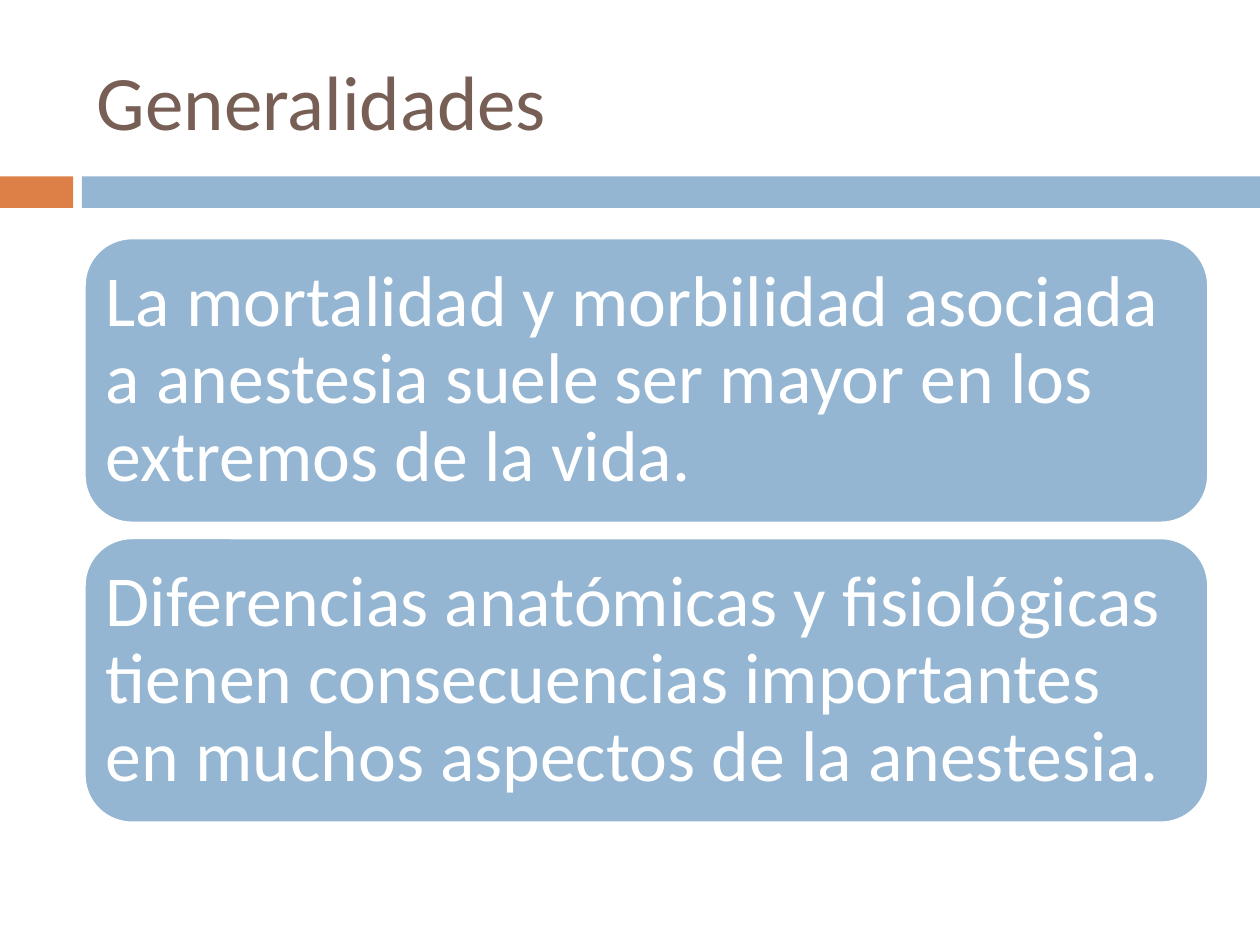
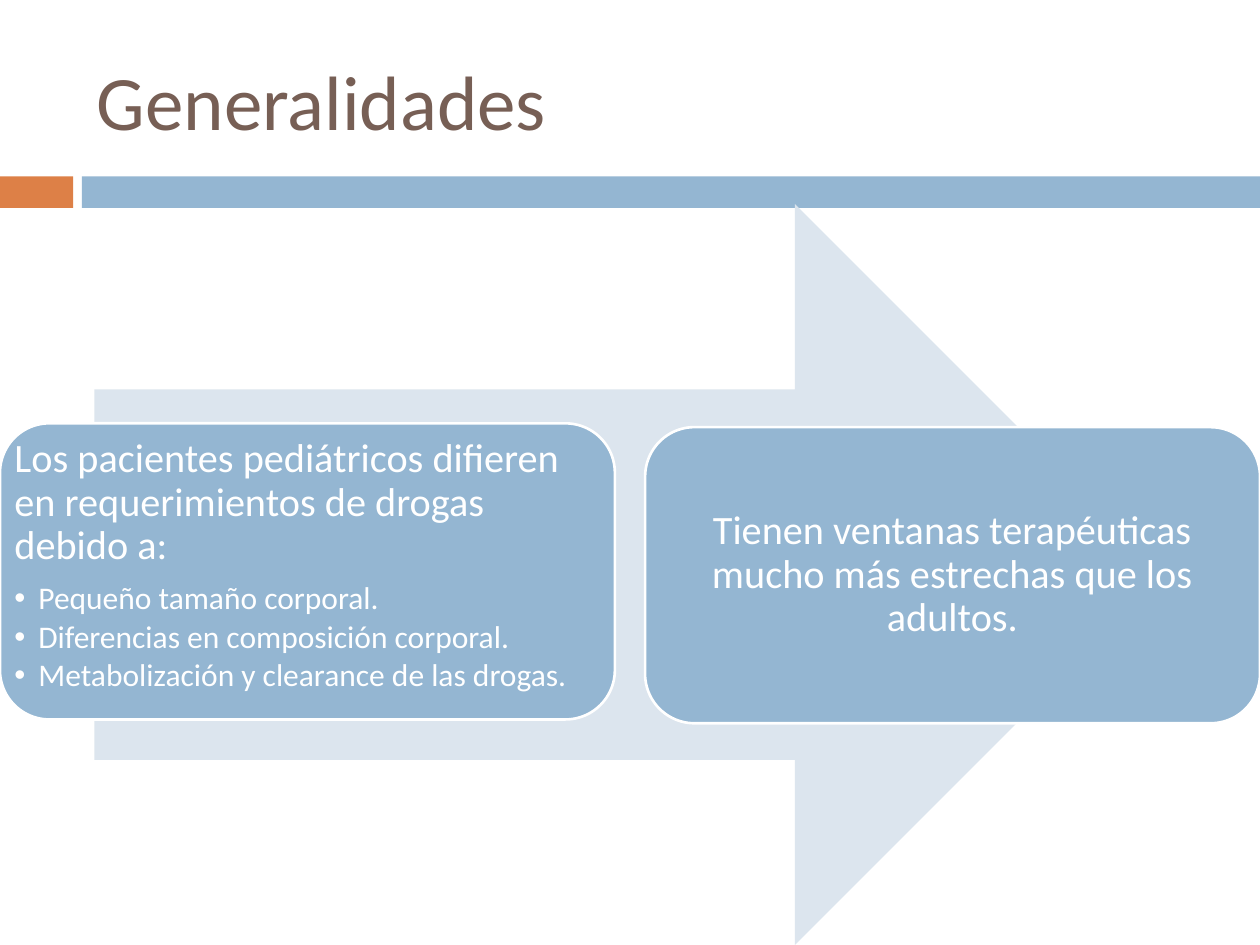
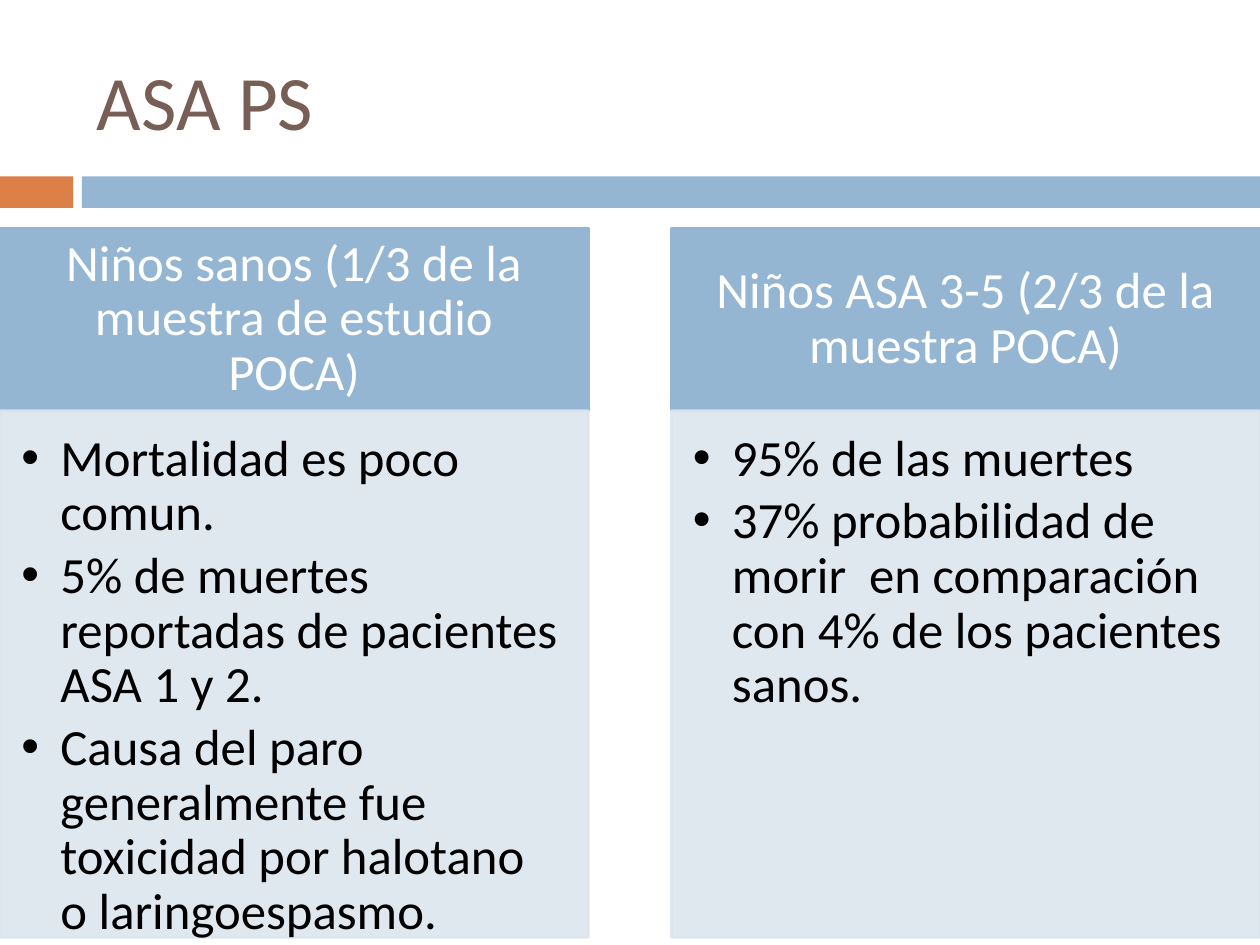
from lxml.etree import SubElement as Sub
from pptx import Presentation
from pptx.dml.color import RGBColor
from pptx.enum.shapes import MSO_SHAPE as Shape
from pptx.enum.text import MSO_ANCHOR as Anchor, PP_ALIGN as Align
from pptx.oxml.ns import qn
from pptx.util import Inches, Pt

COLORS = {"title": "775F55", "accent": "DD8047", "blue": "94B6D2",
          "pale": "DCE5EE", "white": "FFFFFF", "black": "000000"}
FONT = "Calibri"
WIDE = 10


def tint(name):
    return RGBColor.from_string(COLORS[name])


def fade(fill, share):
    """Set the opacity, in percent, of a solid fill element."""
    Sub(fill[0], qn("a:alpha")).set("val", str(share * 1000))


def bullet(para, indent):
    props = para._p.get_or_add_pPr()
    props.set("marL", str(Inches(indent)))
    props.set("indent", str(-Inches(indent)))
    Sub(props, qn("a:buFont")).set("typeface", "Arial")
    Sub(props, qn("a:buChar")).set("char", "•")


class Deck:
    def __init__(self):
        self.prs = Presentation()
        self.prs.slide_width, self.prs.slide_height = Inches(WIDE), Inches(7.5)
        self.slide = None

    def page(self, title):
        """Start a slide with its two-part band and its title."""
        self.slide = self.prs.slides.add_slide(self.prs.slide_layouts[6])
        self.block((0, 1.4, 0.58, 0.25), "accent")
        self.block((0.65, 1.4, 9.35, 0.25), "blue")
        box = self.slide.shapes.add_textbox(*map(Inches, (0.67, 0.25, 8.92, 1.08)))
        self.frame(box, Anchor.MIDDLE, (0.1, 0.05, 0.1, 0.05))
        self.line(box, title, 44, "title", lead=1, after=0)

    def block(self, area, fill, line=None, kind=Shape.RECTANGLE, alpha=None):
        shape = self.slide.shapes.add_shape(kind, *map(Inches, area))
        shape.shadow.inherit = False
        shape.fill.solid()
        shape.fill.fore_color.rgb = tint(fill)
        if line:
            shape.line.color.rgb = tint(line)
            shape.line.width = Pt(1.5)
        else:
            shape.line.fill.background()
        if alpha:
            for solid in list(shape._element.spPr.iter(qn("a:solidFill"))):
                fade(solid, alpha)
        return shape

    def card(self, area, anchor=Anchor.MIDDLE, pad=0.0):
        shape = self.block(area, "blue", "white", Shape.ROUNDED_RECTANGLE)
        self.frame(shape, anchor, (pad,) * 4)
        return shape

    def frame(self, shape, anchor, pads):
        """Set anchor and left, top, right and bottom insets."""
        text = shape.text_frame
        text.word_wrap = True
        text.vertical_anchor = anchor
        (text.margin_left, text.margin_top,
         text.margin_right, text.margin_bottom) = map(Inches, pads)

    def line(self, shape, text, size, color="white", align=Align.LEFT,
             lead=0.9, after=0.35, indent=None):
        """Add a paragraph; after is a share of the text size."""
        frame = shape.text_frame
        para = frame.paragraphs[0] if not frame.text else frame.add_paragraph()
        para.text = text
        para.alignment = align
        para.line_spacing = lead
        para.space_after = Pt(size * after)
        para.font.size, para.font.name = Pt(size), FONT
        para.font.color.rgb = tint(color)
        if indent:
            bullet(para, indent)

    def items(self, shape, texts, size, color, indent):
        for text in texts:
            self.line(shape, text, size, color, after=0.15, indent=indent)


def risks(deck):
    deck.page("Generalidades")
    facts = (
        "La mortalidad y morbilidad asociada a anestesia suele ser mayor en los "
        "extremos de la vida.",
        "Diferencias anatómicas y fisiológicas tienen consecuencias importantes "
        "en muchos aspectos de la anestesia.",
    )
    for row, fact in enumerate(facts):
        card = deck.card((0.67, 1.89 + row * 2.38, 8.92, 2.26), pad=0.06)
        deck.line(card, fact, 41)


def drugs(deck):
    deck.page("Generalidades")
    deck.block((0.75, 1.62, 8.5, 5.88), "pale", kind=Shape.RIGHT_ARROW)
    width, high = 4.88, 2.35
    needs = deck.card((0, 3.36, width, high), Anchor.TOP)
    deck.line(needs, "Los pacientes pediátricos difieren en requerimientos de "
              "drogas debido a:", 23)
    deck.items(needs, ("Pequeño tamaño corporal.",
                       "Diferencias en composición corporal.",
                       "Metabolización y clearance de las drogas."),
               18, "white", 0.19)
    window = deck.card((WIDE - width, 3.39, width, high))
    deck.line(window, "Tienen ventanas terapéuticas mucho más estrechas que los "
              "adultos.", 23, align=Align.CENTER)


def groups(deck):
    deck.page("ASA PS")
    width, top, head = 4.67, 1.81, 1.45
    columns = (
        ("Niños sanos (1/3 de la muestra de estudio POCA)",
         ("Mortalidad es poco comun.",
          "5% de muertes reportadas de pacientes ASA 1 y 2.",
          "Causa del paro generalmente fue toxicidad por halotano o "
          "laringoespasmo.")),
        ("Niños ASA 3-5 (2/3 de la muestra POCA)",
         ("95% de las muertes",
          "37% probabilidad de morir  en comparación con 4% de los pacientes "
          "sanos.")),
    )
    for col, (name, facts) in enumerate(columns):
        left = col * (WIDE - width)
        label = deck.block((left, top, width, head), "blue", "blue")
        deck.frame(label, Anchor.MIDDLE, (0.23, 0.13, 0.23, 0.13))
        deck.line(label, name, 29, align=Align.CENTER)
        body = deck.block((left, top + head, width, 4.18), "pale", "pale", alpha=90)
        deck.frame(body, Anchor.TOP, (0.17, 0.17, 0.23, 0.25))
        deck.items(body, facts, 29, "black", 0.31)


def main():
    deck = Deck()
    for build in (risks, drugs, groups):
        build(deck)
    deck.prs.save("out.pptx")


if __name__ == "__main__":
    main()
